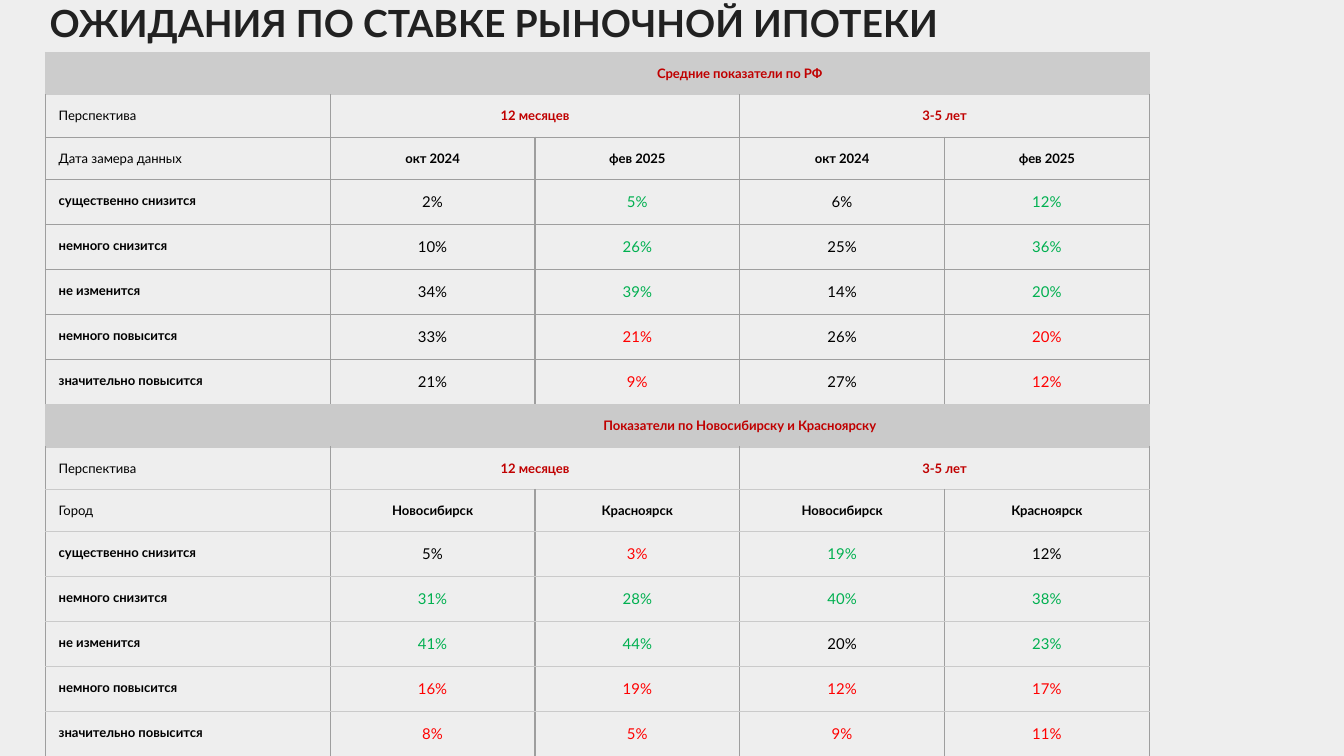
from dataclasses import dataclass

from lxml.etree import SubElement
from pptx import Presentation
from pptx.dml.color import RGBColor as RGB
from pptx.enum.text import MSO_ANCHOR as Anchor, MSO_AUTO_SIZE as AutoSize, PP_ALIGN as Align
from pptx.oxml.ns import qn
from pptx.util import Cm, Pt


@dataclass(frozen=True)
class Theme:
    font: str = "Lato"
    title_size: float = 20
    label_size: float = 7
    value_size: float = 8
    page: str = "EEEEEE"
    title: str = "212121"
    text: str = "000000"
    accent: str = "C00000"
    better: str = "00B050"
    worse: str = "FF0000"
    line: str = "9E9E9E"
    band_country: str = "CCCCCC"
    band_cities: str = "CACACA"


theme = Theme()


def write(holder, text, size=theme.label_size, color=theme.text, bold=False, align=Align.LEFT):
    """Put one formatted line of text in a shape or a table cell."""
    para = holder.text_frame.paragraphs[0]
    para.alignment = align
    holder.margin_left = holder.margin_right = Cm(0.25)
    holder.margin_top = holder.margin_bottom = Cm(0.25)
    holder.vertical_anchor = Anchor.TOP
    if not text:
        para._p.get_or_add_endParaRPr().set("sz", str(int(size * 100)))
        return
    span = para.add_run()
    span.text = text
    span.font.name = theme.font
    span.font.size = Pt(size)
    span.font.bold = bold
    span.font.color.rgb = RGB.from_string(color)


def style_cell(cell, sides, top, bottom, fill=None):
    """Draw the four borders of a cell, then its fill."""
    properties = cell._tc.get_or_add_tcPr()
    for tag, color in (("lnL", sides), ("lnR", sides), ("lnT", top), ("lnB", bottom)):
        line = SubElement(properties, qn(f"a:{tag}"), w=str(Pt(0.75)))
        solid = SubElement(line, qn("a:solidFill"))
        SubElement(solid, qn("a:srgbClr"), val=color)
    if fill:
        cell.fill.solid()
        cell.fill.fore_color.rgb = RGB.from_string(fill)
    else:
        cell.fill.background()


# Content: "+" after a value marks it green, "-" marks it red
outlooks = ["существенно снизится", "немного снизится", "не изменится",
            "немного повысится", "значительно повысится"]
sections = [
    dict(heading="Средние показатели по РФ", band=theme.band_country, rule=theme.line,
         split="Дата замера данных", columns=["окт 2024", "фев 2025"],
         values=["2% 5%+ 6% 12%+", "10% 26%+ 25% 36%+", "34% 39%+ 14% 20%+",
                 "33% 21%- 26% 20%-", "21% 9%- 27% 12%-"]),
    dict(heading="Показатели по Новосибирску и Красноярску", band=theme.band_cities,
         rule=theme.band_cities,
         split="Город", columns=["Новосибирск", "Красноярск"],
         values=["5% 3%- 19%+ 12%", "31%+ 28%+ 40%+ 38%+", "41%+ 44%+ 20% 23%+",
                 "16%- 19%- 12%- 17%-", "8%- 5%- 9%- 11%-"]),
]
mark_colors = {"+": theme.better, "-": theme.worse}
header_rows = 3
section_rows = header_rows + len(outlooks)
row_count = section_rows * len(sections)

# Page
deck = Presentation()
deck.slide_width, deck.slide_height = Cm(25.4), Cm(14.28)
page = deck.slides.add_slide(deck.slide_layouts[5])
page.background.fill.solid()
page.background.fill.fore_color.rgb = RGB.from_string(theme.page)

# Title
title = page.shapes.title
title.left, title.top, title.width, title.height = Cm(0.69), Cm(-0.25), Cm(23.14), Cm(1.83)
frame = title.text_frame
frame.auto_size = AutoSize.NONE
frame.word_wrap = True
write(frame._parent, "ОЖИДАНИЯ ПО СТАВКЕ РЫНОЧНОЙ ИПОТЕКИ", size=theme.title_size,
      color=theme.title, bold=True)
frame.vertical_anchor = Anchor.TOP
frame.margin_left = frame.margin_right = frame.margin_top = frame.margin_bottom = Cm(0.25)

# Table grid
table = page.shapes.add_table(row_count, 5, Cm(0.86), Cm(0.99), Cm(20.86), Cm(13.3)).table
table.first_row = table.horz_banding = False
for index, column in enumerate(table.columns):
    column.width = Cm(3.87 if index else 5.38)
for index, row in enumerate(table.rows):
    row.height = Cm(0.8 if index % section_rows < header_rows else 0.85)

for number, section in enumerate(sections):
    first = number * section_rows

    # Section heading, horizon and column names
    table.cell(first, 1).merge(table.cell(first, 4))
    write(table.cell(first, 0), "")
    write(table.cell(first, 1), section["heading"], color=theme.accent, bold=True,
          align=Align.CENTER)
    write(table.cell(first + 1, 0), "Перспектива")
    write(table.cell(first + 2, 0), section["split"])
    for left, horizon in ((1, "12 месяцев"), (3, "3-5 лет")):
        table.cell(first + 1, left).merge(table.cell(first + 1, left + 1))
        write(table.cell(first + 1, left), horizon, color=theme.accent, bold=True,
              align=Align.CENTER)
        for offset, name in enumerate(section["columns"]):
            write(table.cell(first + 2, left + offset), name, bold=True, align=Align.CENTER)

    # Outlook shares
    for index, (outlook, values) in enumerate(zip(outlooks, section["values"]), first + header_rows):
        write(table.cell(index, 0), outlook, bold=True)
        for column, value in enumerate(values.split(), 1):
            write(table.cell(index, column), value.rstrip("+-"), size=theme.value_size,
                  color=mark_colors.get(value[-1], theme.text), align=Align.CENTER)

    # Borders and fills
    band, rule = section["band"], section["rule"]
    for offset in range(section_rows):
        top = band if offset <= 1 else rule
        bottom = band if offset == 0 else rule
        if offset == section_rows - 1:
            bottom = theme.line if number == len(sections) - 1 else theme.band_cities
        for column in range(5):
            cell = table.cell(first + offset, column)
            if not cell.is_spanned:
                style_cell(cell, theme.line if offset else band, top, bottom,
                           fill=None if offset else band)

deck.save("out.pptx")
